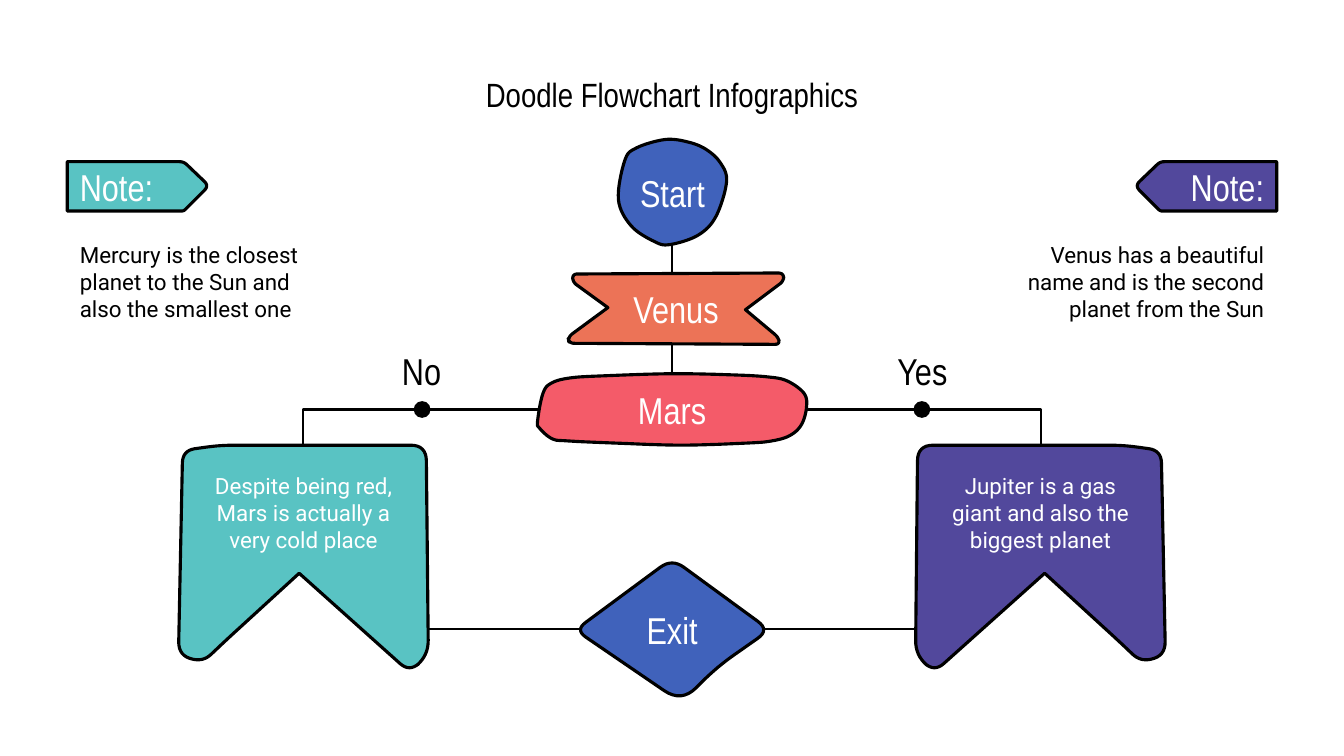
from lxml import etree
from pptx import Presentation
from pptx.dml.color import RGBColor
from pptx.enum.shapes import MSO_CONNECTOR as LINK, MSO_SHAPE as SHAPE
from pptx.enum.text import MSO_ANCHOR as ANCHOR, PP_ALIGN as ALIGN
from pptx.oxml.ns import qn
from pptx.util import Pt

PX = 9525
WIDTH, HEIGHT = 1280, 720
COLORS = {"ink": "000000", "paper": "FFFFFF", "blue": "4062BB", "orange": "EC7357",
          "red": "F45B69", "teal": "59C3C3", "purple": "52489C"}
HEADING, BODY = ("Arial Narrow", 26.7), ("Roboto", 16)

# Points on the smooth outlines
START = [(45, 0), (18, 8), (7, 20), (1, 57), (13, 82), (35, 97), (50, 100), (77, 91),
         (94, 73), (104, 40), (98, 22), (84, 9), (66, 2)]
MARS = [(127, 0), (63, 2), (31, 4), (13, 9), (5, 19), (0, 45), (2, 52), (14, 62), (29, 64),
        (73, 66), (137, 68), (200, 66), (223, 64), (240, 59), (251, 49), (256, 33),
        (254, 19), (238, 7), (219, 3), (183, 1)]
# Corners as x, y and the length cut off for rounding
RIBBON = [(5, 1, 5), (6, 9, 4), (39, 33, 0), (1, 61, 5), (2, 67, 5),
          (203, 68, 5), (201, 61, 4), (170, 35, 0), (206, 8, 4), (207, 0, 6)]
DIAMOND = [(87, -4, 14), (-5, 64, 12), (96, 133, 20), (130, 99, 20), (180, 64, 14)]
TAG = [(0, 0, 1), (111, 0, 4), (135, 23, 6), (111, 47, 2), (0, 47, 0)]
BANNER = [(4, 5, 12), (40, 0, 14), (236, 0, 15), (238, 200, 14), (220, 216, 12),
          (115, 122, 0), (44, 187, 8), (24, 206, 10), (0, 201, 14)]


def color(name):
    return RGBColor.from_string(COLORS[name])


def smooth(points, steps=8):
    """Closed Catmull-Rom curve through the points."""
    curve = []
    for i in range(len(points)):
        a, b, c, d = (points[(i + k) % len(points)] for k in (-1, 0, 1, 2))
        for t in (step / steps for step in range(steps)):
            curve.append(tuple(
                q + t * (r - p + t * (2 * p - 5 * q + 4 * r - s
                                      + t * (3 * q - p - 3 * r + s))) / 2
                for p, q, r, s in zip(a, b, c, d)))
    return curve


def rounded(corners, steps=8):
    """Polygon with each corner replaced by a quadratic curve."""
    curve = []
    for i, (x, y, cut) in enumerate(corners):
        ends = []
        for nx, ny, _ in (corners[i - 1], corners[(i + 1) % len(corners)]):
            share = cut / ((nx - x) ** 2 + (ny - y) ** 2) ** 0.5
            ends.append((x + share * (nx - x), y + share * (ny - y)))
        for t in (step / steps for step in range(steps + 1 if cut else 1)):
            curve.append(tuple((1 - t) ** 2 * p + 2 * t * (1 - t) * v + t * t * q
                               for p, v, q in zip(ends[0], (x, y), ends[1])))
    return curve


def write(shape, text, font, ink, align=ALIGN.CENTER, anchor=ANCHOR.MIDDLE, inset=12):
    frame = shape.text_frame
    frame.text = text
    frame.word_wrap = True
    frame.vertical_anchor = anchor
    frame.margin_left = frame.margin_right = frame.margin_top = inset * PX
    frame.margin_bottom = 12 * PX
    para = frame.paragraphs[0]
    para.alignment = align
    span = para.runs[0]
    span.font.name, span.font.size = font[0], Pt(font[1])
    span.font.color.rgb = color(ink)


def add_label(page, box, text, font, align=ALIGN.CENTER):
    label = page.shapes.add_textbox(*(n * PX for n in box))
    write(label, text, font, "ink", align)


def add_doodle(page, left, top, outline, fill, text, font=HEADING, **layout):
    spots = [(round((left + x) * PX), round((top + y) * PX)) for x, y in outline]
    builder = page.shapes.build_freeform(*spots[0])
    builder.add_line_segments(spots[1:], close=True)
    doodle = builder.convert_to_shape()
    doodle.shadow.inherit = False
    doodle.fill.solid()
    doodle.fill.fore_color.rgb = color(fill)
    doodle.line.color.rgb = color("ink")
    doodle.line.width = Pt(2.25)
    write(doodle, text, font, "paper", **layout)


def add_link(page, kind, *ends):
    link = page.shapes.add_connector(kind, *(n * PX for n in ends))
    link.line.color.rgb = color("ink")
    link.line.width = Pt(1.5)
    props = link._element.spPr
    etree.SubElement(props, qn("a:effectLst"))
    if kind == LINK.ELBOW:  # turn down only at the far end
        geometry = props.find(qn("a:prstGeom"))
        guides = geometry.find(qn("a:avLst"))
        if guides is None:
            guides = etree.SubElement(geometry, qn("a:avLst"))
        etree.SubElement(guides, qn("a:gd"), name="adj1", fmla="val 100000")


def mirror(outline, width):
    return [(width - x, y) for x, y in outline]


def add_center(page, box):
    """Column of steps with the lines leaving it."""
    left, top, width, height = box
    middle = left + width // 2
    add_link(page, LINK.STRAIGHT, middle, top + 91, middle, top + 224)
    add_link(page, LINK.STRAIGHT, left - 122, top + 466, left + width + 121, top + 466)
    add_doodle(page, left + 76, top, smooth(START), "blue", "Start")
    add_doodle(page, left + 28, top + 127, rounded(RIBBON), "orange", "Venus")
    add_doodle(page, left, top + 223, smooth(MARS), "red", "Mars")
    add_doodle(page, left + 41, top + 403, rounded(DIAMOND), "blue", "Exit")


def add_branch(page, box, fill, answer, fact, flip=False):
    """Banner with its bent line, dot and answer."""
    left, top, width, height = box

    def across(x, size=0):
        return left + (width - x - size if flip else x)

    add_link(page, LINK.ELBOW, across(343), top + 34, across(119), top + 68)
    dot = page.shapes.add_shape(SHAPE.OVAL, across(224, 16) * PX, (top + 26) * PX,
                                16 * PX, 16 * PX)
    dot.shadow.inherit = False
    dot.fill.solid()
    dot.fill.fore_color.rgb = color("ink")
    dot.line.fill.background()
    add_label(page, (across(179, 105), top - 21, 105, 35), answer, HEADING)
    banner = rounded(BANNER)
    add_doodle(page, left, top + 68, mirror(banner, width) if flip else banner, fill,
               fact, BODY, anchor=ANCHOR.TOP, inset=26)


def add_note(page, box, fill, fact, flip=False):
    """Tag above a short text."""
    left, top, width, height = box
    align = ALIGN.RIGHT if flip else ALIGN.LEFT
    tag = rounded(TAG)
    add_doodle(page, left, top, mirror(tag, width) if flip else tag, fill, "Note:",
               align=align)
    text_left = left + width - 264 if flip else left
    add_label(page, (text_left, top + 63, 264, 103), fact, BODY, align)


def main():
    deck = Presentation()
    deck.slide_width, deck.slide_height = WIDTH * PX, HEIGHT * PX
    page = deck.slides.add_slide(deck.slide_layouts[6])
    add_label(page, (64, 58, 1152, 64), "Doodle Flowchart Infographics", (HEADING[0], 24))
    add_center(page, (512, 133, 256, 530))
    add_branch(page, (170, 356, 238, 280), "teal", "No",
               "Despite being red, Mars is actually a very cold place")
    add_branch(page, (872, 356, 238, 280), "purple", "Yes",
               "Jupiter is a gas giant and also the biggest planet", flip=True)
    add_note(page, (64, 154, 132, 166), "teal",
             "Mercury is the closest planet to the Sun and also the smallest one")
    add_note(page, (1084, 154, 132, 166), "purple",
             "Venus has a beautiful name and is the second planet from the Sun", flip=True)
    deck.save("out.pptx")


if __name__ == "__main__":
    main()
